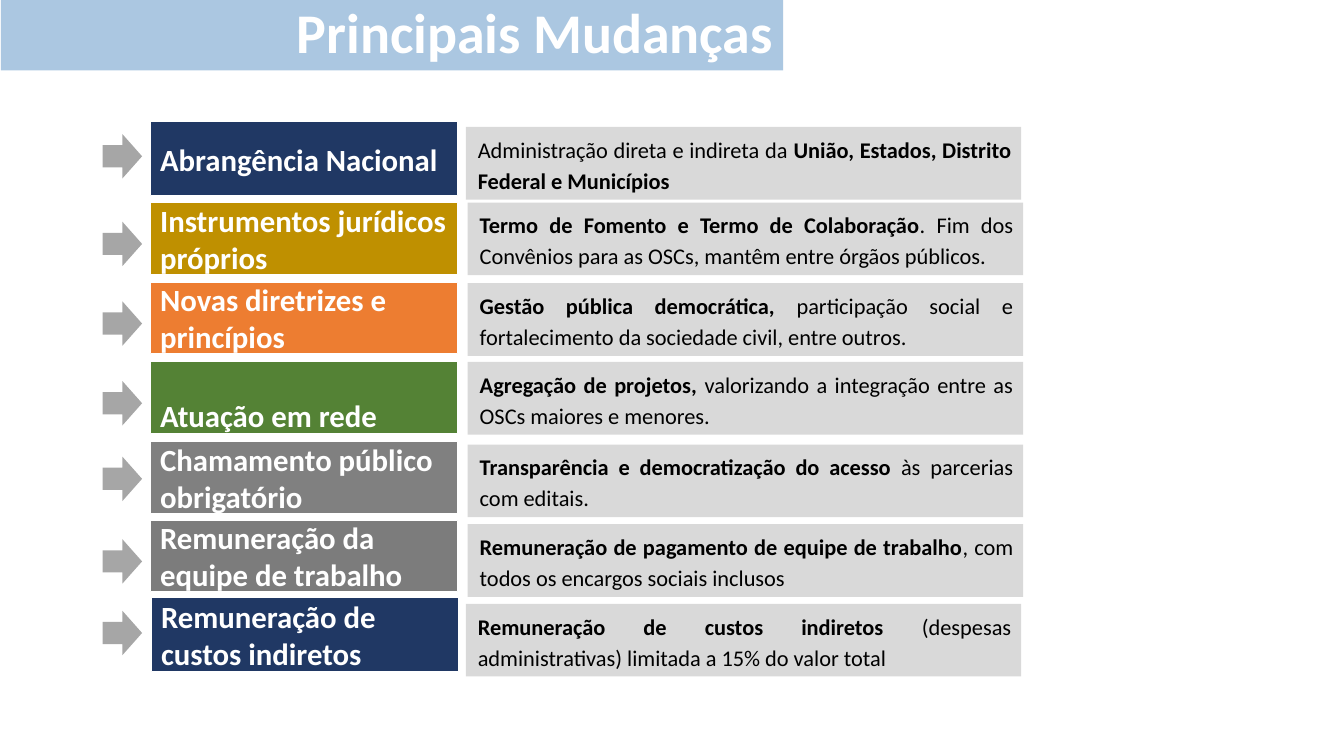
from lxml.etree import SubElement
from pptx import Presentation
from pptx.dml.color import RGBColor
from pptx.enum.shapes import MSO_SHAPE
from pptx.enum.text import MSO_ANCHOR, MSO_AUTO_SIZE, PP_ALIGN
from pptx.oxml.ns import qn
from pptx.util import Pt

TITLE = "Principais Mudanças"

# Label, then the detail as (text, bold) runs
CHANGES = [
    ("Abrangência Nacional",
     [("Administração direta e indireta da ", False),
      ("União, Estados, Distrito Federal e Municípios", True)]),
    ("Instrumentos jurídicos próprios",
     [("Termo de Fomento e Termo de Colaboração", True),
      (". Fim dos Convênios para as OSCs, mantêm entre órgãos públicos.", False)]),
    ("Novas diretrizes e princípios",
     [("Gestão pública democrática, ", True),
      ("participação social e fortalecimento da sociedade civil, entre outros.", False)]),
    ("Atuação em rede",
     [("Agregação de projetos, ", True),
      ("valorizando a integração entre as OSCs maiores e menores.", False)]),
    ("Chamamento público obrigatório",
     [("Transparência e democratização do acesso", True),
      (" às parcerias com editais.", False)]),
    ("Remuneração da equipe de trabalho",
     [("Remuneração de pagamento de equipe de trabalho", True),
      (", com todos os encargos sociais inclusos", False)]),
    ("Remuneração de custos indiretos",
     [("Remuneração de custos indiretos ", True),
      ("(despesas administrativas) limitada a 15% do valor total", False)]),
]

THEME = {
    "font": "Calibri",
    "title_size": 40, "label_size": 22, "detail_size": 16,
    "title_fill": "2E75B6", "title_alpha": 40,
    "detail_fill": "D9D9D9", "arrow_fill": "A6A6A6",
    "light": "FFFFFF", "dark": "000000",
    "labels": ["203864", "BF9000", "ED7D31", "548235", "808080", "7C7C7C", "203864"],
}

# Tops of each row's arrow, label and detail
ROW_TOPS = [
    (95.8, 87.1, 90.7),
    (158.4, 144.7, 144.7),
    (215.3, 201.6, 202.3),
    (272.2, 258.5, 258.5),
    (326.2, 315.4, 317.5),
    (385.2, 371.5, 374.4),
    (436.3, 427, 431.3),
]
ARROW_X, ARROW_W, ARROW_H = 73.4, 28.1, 31.7
LABEL_X, LABEL_W, LABEL_H, END_LABEL_H = 107.3, 219.6, 51.1, 52.6
DETAIL_X, DETAIL_W, DETAIL_H = 334.1, 396.7, 51.9
END_SHIFT = 1.4  # first and last details sit slightly to the left
LOW_LABEL = 3    # the label whose text sits in the lower half of its box


def add_block(s, x, y, w, h, fill, line=None, kind=MSO_SHAPE.RECTANGLE):
    sp = s.shapes.add_shape(kind, Pt(x), Pt(y), Pt(w), Pt(h))
    sp.shadow.inherit = False
    sp.fill.solid()
    sp.fill.fore_color.rgb = RGBColor.from_string(fill)
    if line:
        sp.line.color.rgb = RGBColor.from_string(line)
        sp.line.width = Pt(0.75)
    else:
        sp.line.fill.background()
    return sp


def write(sp, runs, size, color, align=PP_ALIGN.LEFT, anchor=MSO_ANCHOR.MIDDLE,
          spacing=None, left=7.2, top=3.6, bottom=3.6, grow=False):
    tf = sp.text_frame
    tf.word_wrap = True
    tf.auto_size = MSO_AUTO_SIZE.SHAPE_TO_FIT_TEXT if grow else MSO_AUTO_SIZE.NONE
    tf.vertical_anchor = anchor
    tf.margin_left, tf.margin_top, tf.margin_bottom = Pt(left), Pt(top), Pt(bottom)
    p = tf.paragraphs[0]
    p.alignment = align
    if spacing:
        p.line_spacing = spacing
    for text, bold in runs:
        r = p.add_run()
        r.text = text
        r.font.name, r.font.size, r.font.bold = THEME["font"], Pt(size), bold
        r.font.color.rgb = RGBColor.from_string(color)


def set_alpha(sp, percent):
    color = sp.fill._xPr.find(qn("a:solidFill"))[0]
    SubElement(color, qn("a:alpha")).set("val", str(percent * 1000))


def add_change(s, i, label, detail):
    arrow_y, label_y, detail_y = ROW_TOPS[i]
    at_end = i in (0, len(CHANGES) - 1)

    add_block(s, ARROW_X, arrow_y, ARROW_W, ARROW_H, THEME["arrow_fill"],
              kind=MSO_SHAPE.RIGHT_ARROW)

    label_h = END_LABEL_H if at_end else LABEL_H
    label_x = LABEL_X + (0.7 if i == len(CHANGES) - 1 else 0)
    sp = add_block(s, label_x, label_y, LABEL_W, label_h,
                   THEME["labels"][i], THEME["light"])
    insets = {"top": label_h / 2, "bottom": 0} if i == LOW_LABEL else {}
    write(sp, [(label, True)], THEME["label_size"], THEME["light"], **insets)

    detail_x = DETAIL_X - (END_SHIFT if at_end else 0)
    sp = add_block(s, detail_x, detail_y, DETAIL_W, DETAIL_H, THEME["detail_fill"])
    write(sp, detail, THEME["detail_size"], THEME["dark"], align=PP_ALIGN.JUSTIFY,
          anchor=MSO_ANCHOR.TOP, spacing=1.15, left=8.6, grow=True)


def main():
    prs = Presentation()
    prs.slide_width, prs.slide_height = Pt(960), Pt(540)
    s = prs.slides.add_slide(prs.slide_layouts[6])
    for i, (label, detail) in enumerate(CHANGES):
        add_change(s, i, label, detail)
    banner = add_block(s, 0.7, 0, 558.7, 50.4, THEME["title_fill"])
    set_alpha(banner, THEME["title_alpha"])
    write(banner, [(TITLE, True)], THEME["title_size"], THEME["light"],
          align=PP_ALIGN.RIGHT, spacing=0.9)
    prs.save("out.pptx")


if __name__ == "__main__":
    main()
